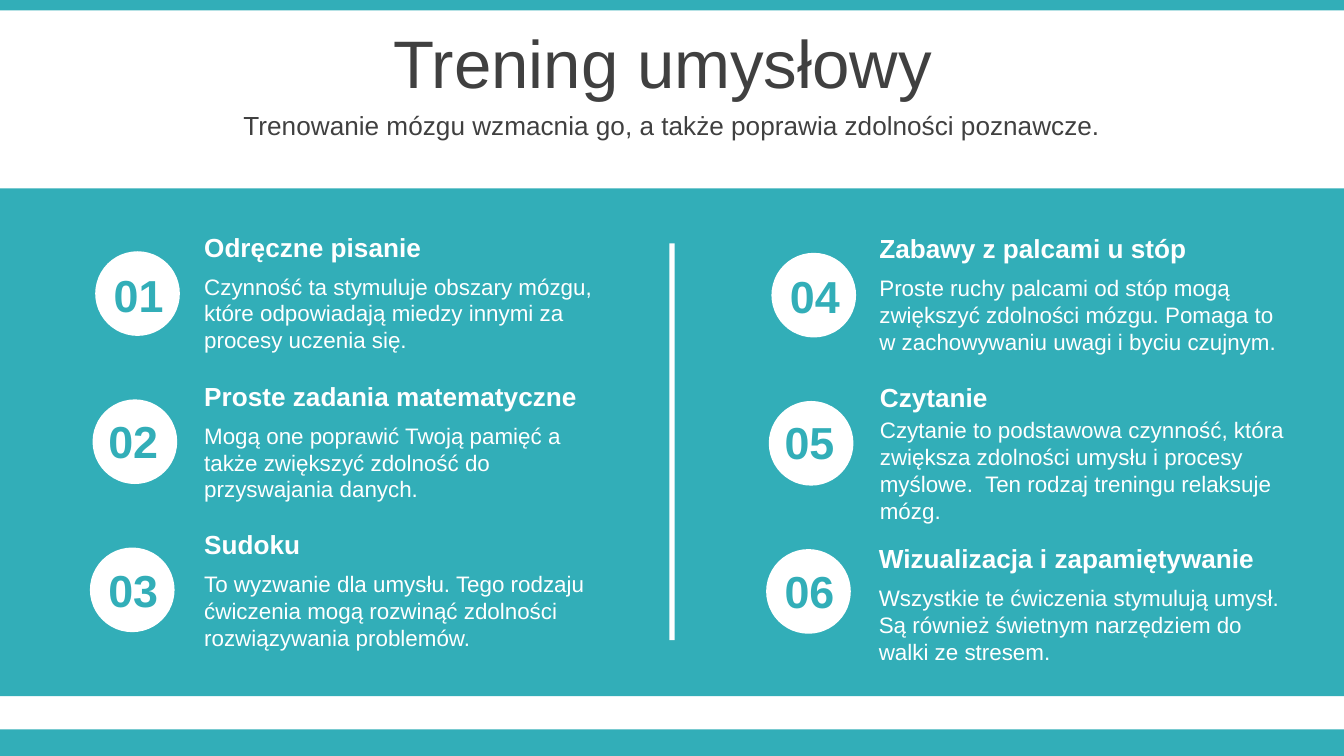
from pptx import Presentation
from pptx.dml.color import RGBColor
from pptx.enum.shapes import MSO_SHAPE
from pptx.enum.text import MSO_ANCHOR, PP_ALIGN
from pptx.util import Cm, Pt

RECT, OVAL = MSO_SHAPE.RECTANGLE, MSO_SHAPE.OVAL
LEFT, MID = PP_ALIGN.LEFT, PP_ALIGN.CENTER
TOP, CENTER = MSO_ANCHOR.TOP, MSO_ANCHOR.MIDDLE

TEAL, WHITE, GREY = "32AEB8", "FFFFFF", "404040"
WIDE, HIGH = 25.4, 14.29
DISC, STEP, SHIFT = 1.6, 2.8, 12.78

# Text formats
TITLE = {"size": 36, "bold": False, "color": GREY}
LEAD = {"size": 14, "bold": False, "color": GREY}
HEAD = {"size": 14, "bold": True, "color": WHITE}
BODY = {"size": 12, "bold": False, "color": WHITE}
NUMBER = {"size": 24, "bold": True, "color": TEAL}

# Number position within the left column
SPOTS = [(1.73, 4.93), (1.63, 7.7), (1.63, 10.52)]

# Heading, lines, left, heading top, gap to body, heading width, body width
ITEMS = [
    ("Odręczne pisanie",
     ["Czynność ta stymuluje obszary mózgu, które odpowiadają miedzy innymi za",
      "procesy uczenia się."], 3.61, 4.24, 0.79, 7.39, 7.9),
    ("Proste zadania matematyczne",
     ["Mogą one poprawić Twoją pamięć a także zwiększyć zdolność do",
      "przyswajania danych."], 3.61, 7.06, 0.79, 7.65, 7.39),
    ("Sudoku",
     ["To wyzwanie dla umysłu. Tego rodzaju ćwiczenia mogą rozwinąć zdolności",
      "rozwiązywania problemów."], 3.61, 9.86, 0.79, 7.39, 7.9),
    ("Zabawy z palcami u stóp",
     ["Proste ruchy palcami od stóp mogą",
      "zwiększyć zdolności mózgu. Pomaga to w zachowywaniu uwagi i byciu czujnym."],
     16.37, 4.27, 0.79, 7.39, 8.13),
    ("Czytanie",
     ["Czytanie to podstawowa czynność, która",
      "zwiększa zdolności umysłu i procesy",
      "myślowe.  Ten rodzaj treningu relaksuje",
      "mózg."], 16.38, 7.09, 0.66, 7.95, 8.71),
    ("Wizualizacja i zapamiętywanie",
     ["Wszystkie te ćwiczenia stymulują umysł. Są również świetnym narzędziem do",
      "walki ze stresem."], 16.36, 10.13, 0.79, 8.13, 8.13),
]


def tint(code):
    return RGBColor.from_string(code)


def write(frame, lines, form, align=LEFT, anchor=TOP):
    frame.word_wrap = True
    frame.vertical_anchor = anchor
    for i, line in enumerate(lines):
        para = frame.paragraphs[0] if i == 0 else frame.add_paragraph()
        para.alignment = align
        run = para.add_run()
        run.text = line
        run.font.color.rgb = tint(form["color"])
        values = {"name": "Arial", "size": Pt(form["size"]), "bold": form["bold"]}
        for name, value in values.items():
            setattr(run.font, name, value)


def add_text(slide, box, lines, form, align=LEFT, anchor=TOP):
    shape = slide.shapes.add_textbox(*map(Cm, box))
    write(shape.text_frame, lines, form, align, anchor)


def add_block(slide, kind, box, color):
    shape = slide.shapes.add_shape(kind, *map(Cm, box))
    shape.shadow.inherit = False
    shape.fill.solid()
    shape.fill.fore_color.rgb = tint(color)
    shape.line.fill.background()


def add_title(slide, box, text):
    title = slide.shapes.title
    for name, value in zip(("left", "top", "width", "height"), box):
        setattr(title, name, Cm(value))
    write(title.text_frame, [text], TITLE, MID, CENTER)


def add_item(slide, index, item):
    head, lines, left, top, gap, head_wide, body_wide = item
    col, row = divmod(index, 3)
    # White disc, each row set slightly further left
    disc = (1.8 - 0.05 * row + SHIFT * col, 4.75 + STEP * row + 0.03 * col)
    add_block(slide, OVAL, (*disc, DISC, DISC), WHITE)
    # Number
    x, y = SPOTS[row]
    add_text(slide, (x + SHIFT * col, y + 0.02 * col, 1.78, 1.27),
             [f"{index + 1:02}"], NUMBER, MID)
    # Heading and body
    add_text(slide, (left, top, head_wide, 0.86), [head], HEAD)
    add_text(slide, (left, top + gap, body_wide, 0.26 + 0.51 * (len(lines) if len(lines) > 2 else 3)),
             lines, BODY)


def main():
    deck = Presentation()
    deck.slide_width, deck.slide_height = Cm(WIDE), Cm(HIGH)
    slide = deck.slides.add_slide(deck.slide_layouts[5])

    # Edge bars, panel and divider
    for top, high in ((0, 0.2), (13.79, 0.5), (3.56, 9.6)):
        add_block(slide, RECT, (0, top, WIDE, high), TEAL)
    add_block(slide, RECT, (12.65, 4.6, 0.1, 7.5), WHITE)

    # Title and lead
    add_title(slide, (0, 0.36, WIDE, 1.6), "Trening umysłowy ")
    add_text(slide, (0, 1.96, WIDE, 0.79),
             ["Trenowanie mózgu wzmacnia go, a także poprawia zdolności poznawcze."],
             LEAD, MID, CENTER)

    # Six exercises in two columns
    for index, item in enumerate(ITEMS):
        add_item(slide, index, item)

    deck.save("out.pptx")


if __name__ == "__main__":
    main()
